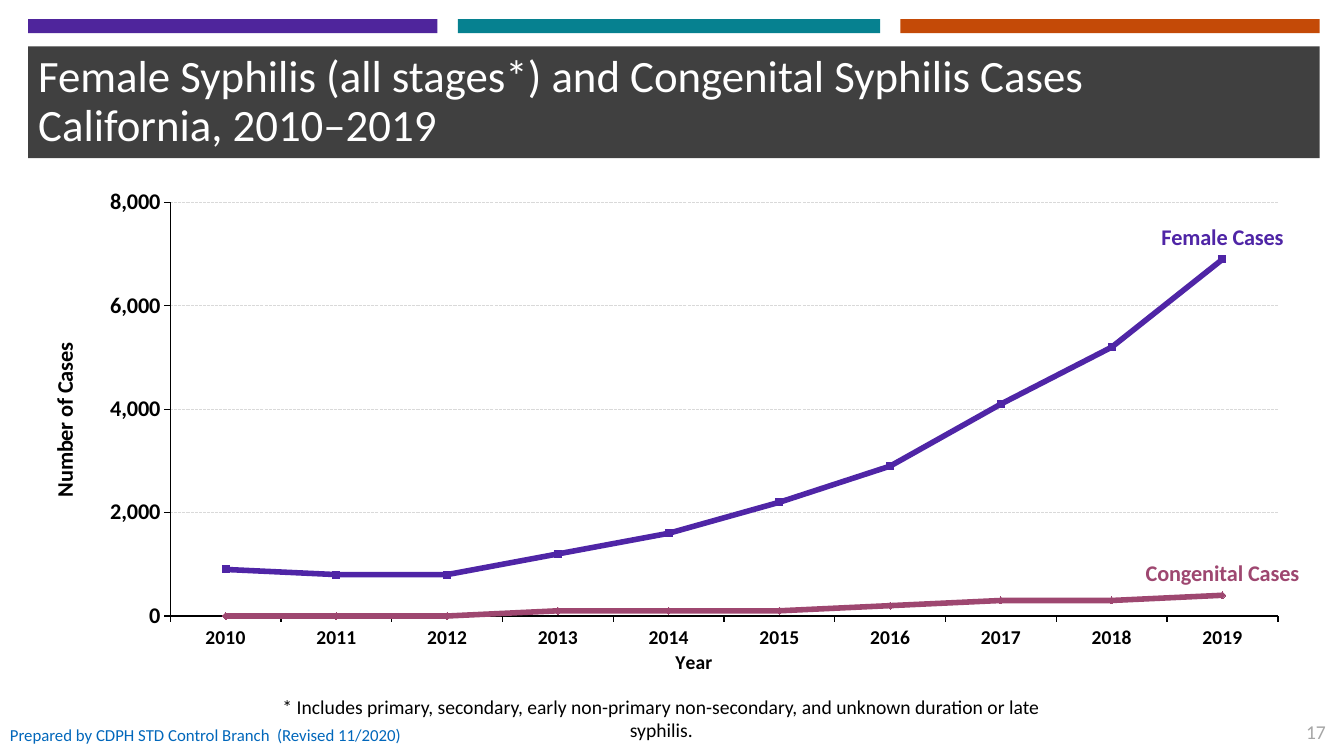
from lxml import etree
from pptx import Presentation
from pptx.chart.data import CategoryChartData
from pptx.dml.color import RGBColor
from pptx.enum.chart import XL_CHART_TYPE, XL_LABEL_POSITION, XL_TICK_MARK
from pptx.enum.dml import MSO_LINE
from pptx.enum.shapes import MSO_SHAPE
from pptx.enum.text import MSO_ANCHOR, PP_ALIGN
from pptx.oxml import parse_xml
from pptx.oxml.ns import nsdecls, qn
from pptx.util import Inches, Pt

PURPLE = RGBColor(0x4F, 0x25, 0x9C)
TEAL = RGBColor(0x06, 0x81, 0x90)
ORANGE = RGBColor(0xC4, 0x4A, 0x07)
CHARCOAL = RGBColor(0x40, 0x40, 0x40)
WHITE = RGBColor(0xFF, 0xFF, 0xFF)
BLACK = RGBColor(0, 0, 0)
GRID = RGBColor(0xD9, 0xD9, 0xD9)
GREY = RGBColor(0xA6, 0xA6, 0xA6)
BLUE = RGBColor(0x01, 0x67, 0xBB)
FEMALE = RGBColor(0x4F, 0x25, 0xA6)
CONGENITAL = RGBColor(0x9E, 0x47, 0x70)


def set_font(font, size, color, bold=False):
    for name, value in {"name": "Calibri", "size": Pt(size), "bold": bold}.items():
        setattr(font, name, value)
    font.color.rgb = color


def add_text(box, text, size, color, align=PP_ALIGN.LEFT, anchor=MSO_ANCHOR.MIDDLE, wrap=True):
    tb = s.shapes.add_textbox(*[Inches(v) for v in box])
    tf = tb.text_frame
    tf.word_wrap = wrap
    tf.vertical_anchor = anchor
    p = tf.paragraphs[0]
    p.text = text
    p.alignment = align
    for r in p.runs:
        set_font(r.font, size, color)
    return p


prs = Presentation()
prs.slide_width, prs.slide_height = Inches(13.33), Inches(7.5)
s = prs.slides.add_slide(prs.slide_layouts[6])

# Title band and coloured bars
for left, top, width, height, color in [
    (0.28, 0.46, 12.81, 1.11, CHARCOAL),
    (0.28, 0.19, 4.06, 0.14, PURPLE),
    (4.54, 0.19, 4.19, 0.14, TEAL),
    (8.93, 0.19, 4.16, 0.14, ORANGE),
]:
    sp = s.shapes.add_shape(MSO_SHAPE.RECTANGLE, Inches(left), Inches(top),
                            Inches(width), Inches(height))
    sp.shadow.inherit = False
    sp.fill.solid()
    sp.fill.fore_color.rgb = color
    sp.line.fill.background()

# Title
p = add_text((0.28, 0.46, 12.81, 1.11),
             "Female Syphilis (all stages*) and Congenital Syphilis Cases\vCalifornia, 2010–2019",
             32, WHITE)
p.line_spacing = 0.9

# Line chart
data = CategoryChartData(number_format="#,##0")
data.categories = [str(year) for year in range(2010, 2020)]
data.add_series("Female Cases", [900, 800, 800, 1200, 1600, 2200, 2900, 4100, 5200, 6900])
data.add_series("Congenital Cases", [0, 0, 0, 100, 100, 100, 200, 300, 300, 400])
chart = s.shapes.add_chart(XL_CHART_TYPE.LINE, Inches(0.45), Inches(1.69),
                           Inches(12.45), Inches(5.06), data).chart
chart.has_legend = False
chart.has_title = False
set_font(chart.font, 16, BLACK, True)

# Axes
cat, val = chart.category_axis, chart.value_axis
for axis, title, size in [(cat, "Year", 14), (val, "Number of Cases", 16)]:
    axis.major_tick_mark = XL_TICK_MARK.OUTSIDE
    axis.minor_tick_mark = XL_TICK_MARK.NONE
    axis.format.line.color.rgb = BLACK
    axis.format.line.width = Pt(0.97)
    set_font(axis.tick_labels.font, size, BLACK, True)
    tf = axis.axis_title.text_frame
    tf.text = title
    set_font(tf.paragraphs[0].runs[0].font, size, BLACK, True)
val.minimum_scale, val.maximum_scale, val.major_unit = 0, 8000, 2000
val.tick_labels.number_format = "#,##0"
val.tick_labels.number_format_is_linked = False
grid = val.major_gridlines.format.line
grid.color.rgb = GRID
grid.width = Pt(0.75)
grid.dash_style = MSO_LINE.SQUARE_DOT
grid_dash = val.major_gridlines._xAx.find(".//" + qn("a:prstDash"))
grid_dash.set("val", "sysDash")

# Series lines, each named at its last point
for series, color in zip(chart.plots[0].series, [FEMALE, CONGENITAL]):
    series.smooth = False
    series.marker.style = None
    series.format.line.color.rgb = color
    series.format.line.width = Pt(4)
    label = series.points[9].data_label
    set_font(label.font, 16, color, True)
    label.position = XL_LABEL_POSITION.ABOVE
    dlbl = series._element.find(".//" + qn("c:dLbl"))
    dlbl.find(qn("c:showVal")).set("val", "0")
    dlbl.find(qn("c:showSerName")).set("val", "1")
    for tag in ("c:showVal", "c:showSerName", "c:showCatName", "c:showLegendKey"):
        flag = dlbl.getparent().find(qn(tag))
        if flag is not None:
            flag.set("val", "0")

# Plot area placement
plot_area = chart._chartSpace.find(".//" + qn("c:plotArea"))
layout = plot_area.find(qn("c:layout"))
if layout is not None:
    plot_area.remove(layout)
layout = parse_xml(f"<c:layout {nsdecls('c')}><c:manualLayout/></c:layout>")
for tag, value in [("layoutTarget", "inner"), ("xMode", "edge"), ("yMode", "edge"),
                   ("x", 0.1), ("y", 0.063), ("w", 0.887), ("h", 0.811)]:
    etree.SubElement(layout[0], qn(f"c:{tag}")).set("val", str(value))
plot_area.insert(0, layout)

# Footnote, source and page number
add_text((2.44, 6.84, 8.24, 0.34),
         "* Includes primary, secondary, early non-primary non-secondary, "
         "and unknown duration or late syphilis.",
         14, BLACK, PP_ALIGN.CENTER, MSO_ANCHOR.TOP)
add_text((0, 7.09, 2.8, 0.4), "Prepared by CDPH STD Control Branch", 12, BLUE, wrap=False)
add_text((2.65, 7.09, 1.5, 0.4), "(Revised 11/2020)", 12, BLUE)
add_text((12.82, 7.09, 0.43, 0.34), "17", 14, GREY, PP_ALIGN.RIGHT, MSO_ANCHOR.TOP, wrap=False)

prs.save("out.pptx")
